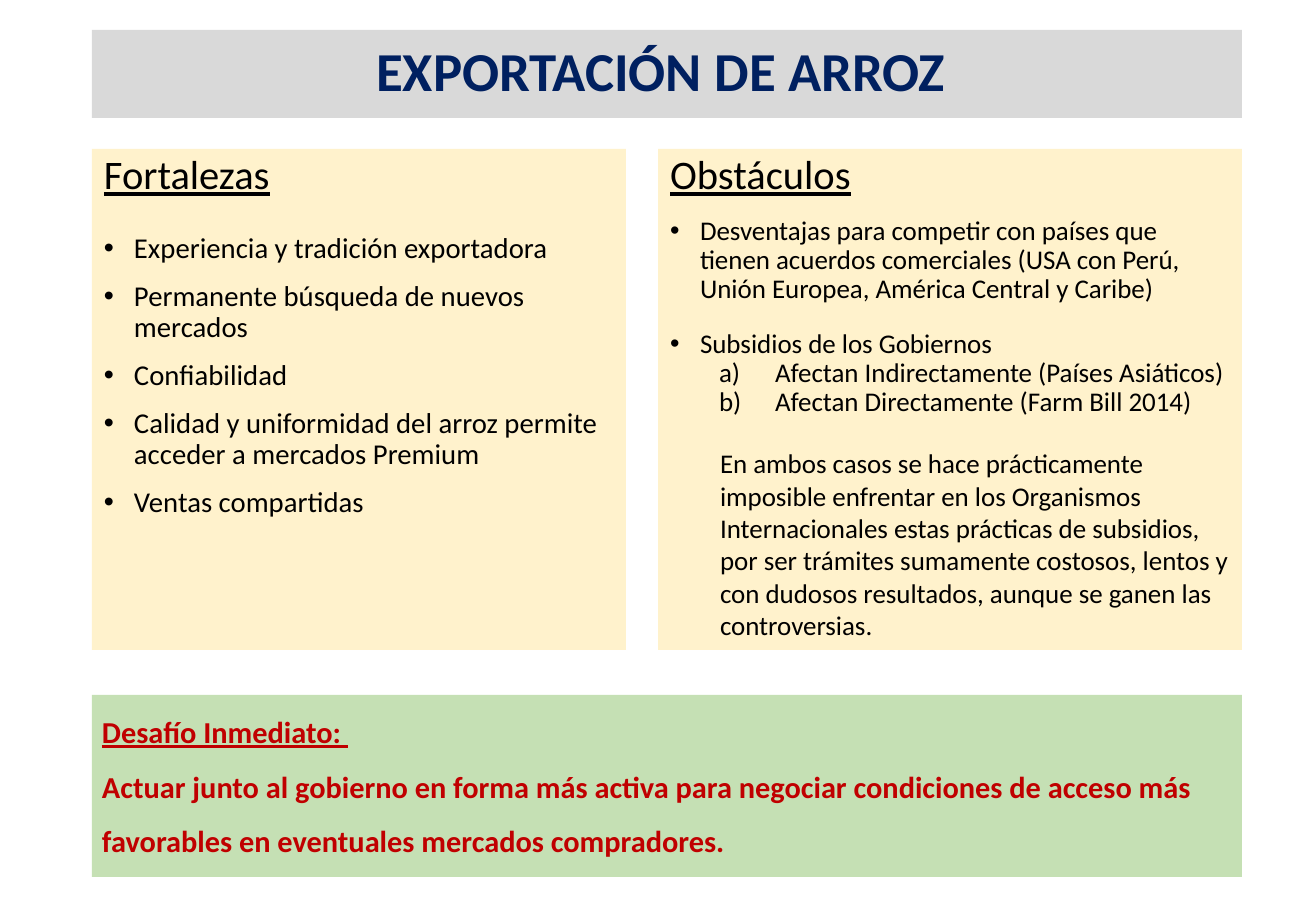
from lxml.etree import SubElement
from pptx import Presentation
from pptx.dml.color import RGBColor
from pptx.enum.shapes import MSO_SHAPE
from pptx.enum.text import MSO_ANCHOR, PP_ALIGN
from pptx.oxml.ns import qn
from pptx.util import Pt

PX = 914400 / 121.5
GREY = RGBColor(0xD9, 0xD9, 0xD9)
CREAM = RGBColor(0xFF, 0xF2, 0xCC)
GREEN = RGBColor(0xC5, 0xE0, 0xB4)
NAVY = RGBColor(0x00, 0x20, 0x60)
BLACK = RGBColor(0x00, 0x00, 0x00)
RED = RGBColor(0xC0, 0x00, 0x00)

LEFT, WIDTH = 92, 1150
COLUMN_TOP, COLUMN_HEIGHT = 149, 501


def px(length):
    return round(length * PX)


def write(frame, text, size, color=BLACK, bold=False, underline=False,
          align=PP_ALIGN.LEFT, spacing=0.9, before=0,
          margin=0, indent=0, bullet=None, numbering=None):
    first = frame.paragraphs[0]
    paragraph = frame.add_paragraph() if first.runs else first
    paragraph.alignment = align
    paragraph.line_spacing = spacing
    paragraph.space_before = Pt(before)
    properties = paragraph._p.get_or_add_pPr()
    properties.set("marL", str(px(margin)))
    properties.set("indent", str(px(indent)))
    if bullet:
        SubElement(properties, qn("a:buFont"), typeface="Arial")
        SubElement(properties, qn("a:buChar"), char=bullet)
    elif numbering:
        SubElement(properties, qn("a:buFont"), typeface="+mj-lt")
        SubElement(properties, qn("a:buAutoNum"), type=numbering)
    run = paragraph.add_run()
    run.text = text
    run.font.name = "Calibri"
    run.font.size = Pt(size)
    run.font.color.rgb = color
    run.font.bold = bold
    run.font.underline = underline


class Deck:
    def __init__(self, width, height):
        self.presentation = Presentation()
        self.presentation.slide_width = px(width)
        self.presentation.slide_height = px(height)
        self.slide = self.presentation.slides.add_slide(
            self.presentation.slide_layouts[6])

    def panel(self, left, top, width, height, fill,
              anchor=MSO_ANCHOR.TOP, side=12, edge=6):
        panel = self.slide.shapes.add_shape(
            MSO_SHAPE.RECTANGLE, px(left), px(top), px(width), px(height))
        panel.shadow.inherit = False
        panel.fill.solid()
        panel.fill.fore_color.rgb = fill
        panel.line.fill.background()
        frame = panel.text_frame
        frame.word_wrap = True
        frame.vertical_anchor = anchor
        frame.margin_left = frame.margin_right = px(side)
        frame.margin_top = frame.margin_bottom = px(edge)
        return frame

    def column(self, left, width, heading):
        frame = self.panel(left, COLUMN_TOP, width, COLUMN_HEIGHT, CREAM)
        write(frame, heading, 24, underline=True)
        return frame

    def save(self):
        self.presentation.save("out.pptx")


def main():
    deck = Deck(1316, 911)

    title = deck.panel(LEFT, 30, WIDTH, 88, GREY, anchor=MSO_ANCHOR.MIDDLE)
    write(title, "EXPORTACIÓN DE ARROZ ", 32.5, NAVY, bold=True,
          align=PP_ALIGN.CENTER)

    strengths = deck.column(LEFT, 534, "Fortalezas")
    for strength, before in (
            ("Experiencia y tradición exportadora", 21),
            ("Permanente búsqueda de nuevos mercados", 10),
            ("Confiabilidad", 10),
            ("Calidad y uniformidad del arroz permite acceder a mercados Premium", 10),
            ("Ventas compartidas", 10)):
        write(strengths, strength, 17, before=before, margin=30, indent=-30,
              bullet="•")

    obstacles = deck.column(658, 584, "Obstáculos")
    for obstacle, before in (
            ("Desventajas para competir con países que tienen acuerdos comerciales "
             "(USA con Perú, Unión Europea, América Central y Caribe)", 11),
            ("Subsidios de los Gobiernos", 15)):
        write(obstacles, obstacle, 16, before=before, margin=30, indent=-30,
              bullet="•")
    for subsidy in ("Afectan Indirectamente (Países Asiáticos)",
                    "Afectan Directamente (Farm Bill 2014)"):
        write(obstacles, subsidy, 16, margin=105, indent=-56,
              numbering="alphaLcParenR")
    write(obstacles,
          "En ambos casos se hace prácticamente imposible enfrentar en los "
          "Organismos Internacionales estas prácticas de subsidios, por ser "
          "trámites sumamente costosos, lentos y con dudosos resultados, "
          "aunque se ganen las controversias.",
          16, spacing=1.0, before=17.5, margin=50)

    challenge = deck.panel(LEFT, 695, WIDTH, 182, GREEN, side=10, edge=0)
    write(challenge, "Desafío Inmediato: ", 18, RED, bold=True,
          underline=True, spacing=1.5)
    write(challenge,
          "Actuar junto al gobierno en forma más activa para negociar "
          "condiciones de acceso más favorables en eventuales mercados "
          "compradores.",
          18, RED, bold=True, spacing=1.5)

    deck.save()


if __name__ == "__main__":
    main()
